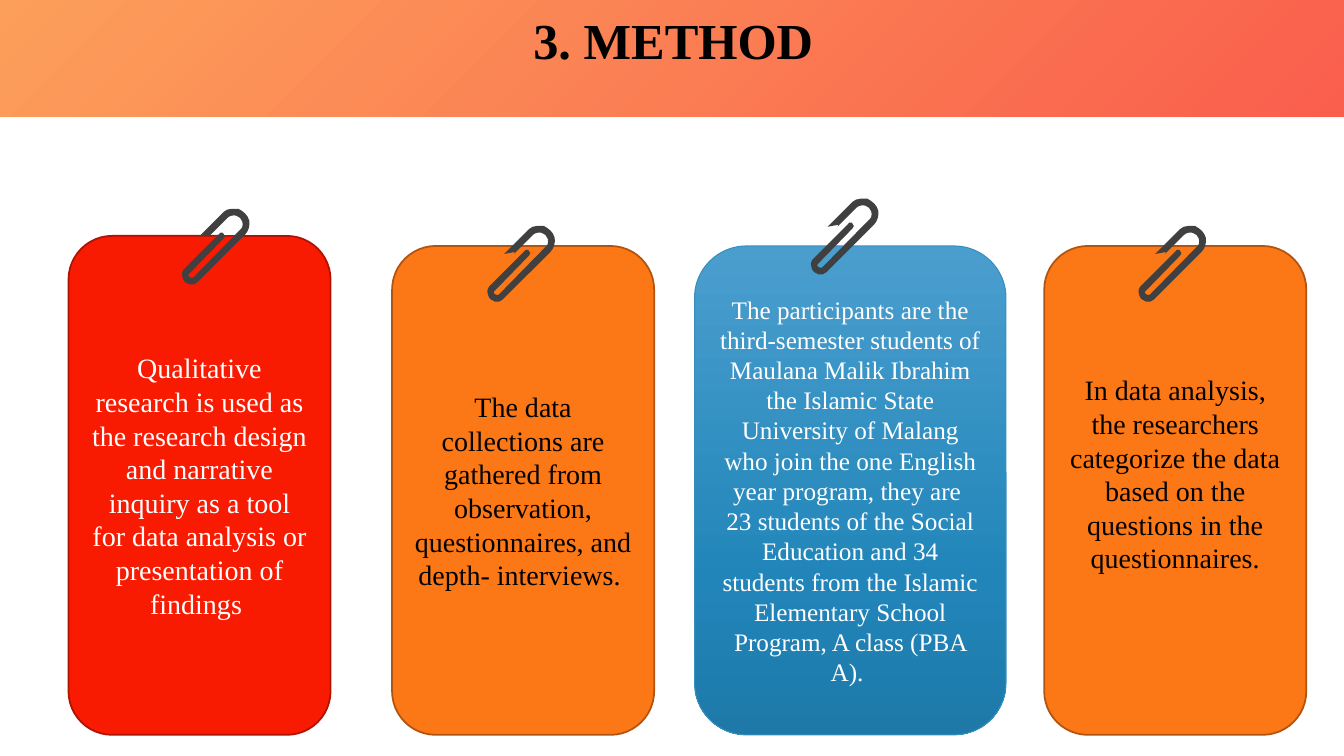
from dataclasses import dataclass
from math import cos, radians, sin

from lxml import etree
from pptx import Presentation
from pptx.dml.color import RGBColor
from pptx.enum.shapes import MSO_SHAPE
from pptx.enum.text import MSO_ANCHOR, PP_ALIGN
from pptx.oxml.ns import qn
from pptx.util import Inches, Pt

RECT = MSO_SHAPE.RECTANGLE
ROUND_RECT = MSO_SHAPE.ROUNDED_RECTANGLE
CENTER = PP_ALIGN.CENTER
MIDDLE = MSO_ANCHOR.MIDDLE

FONT = "Times New Roman"
BLACK, WHITE, GRAY = "000000", "FFFFFF", "404040"
RED, ORANGE = "F81B02", "FC7715"
SLIDE_W, SLIDE_H = 40 / 3, 7.5
CARD_BOTTOM = 7.29
CLIP_W, CLIP_H, CLIP_ANGLE = 0.31, 0.91, 45

CLIP_START = (50, 0)
CLIP_SEGMENTS = [
    (52, 0, 55, 0, 57, 0), (59, 1, 62, 3, 64, 5), (66, 7, 67, 9, 68, 12),
    (69, 17, 67, 23, 64, 26), (16, 74), (14, 76, 11, 77, 8, 76),
    (5, 75, 2, 73, 1, 69), (0, 67, 0, 64, 2, 61), (4, 59), (38, 25),
    (38, 24, 39, 24, 40, 24), (41, 24, 42, 24, 42, 25),
    (44, 26, 44, 29, 42, 30), (8, 65), (7, 65, 7, 66, 7, 67),
    (7, 68, 8, 69, 9, 69), (10, 70, 11, 69, 12, 69), (58, 22),
    (61, 20, 62, 17, 61, 13), (60, 10, 58, 8, 55, 7),
    (52, 6, 48, 7, 46, 9), (27, 28), (28, 26), (17, 28), (42, 3),
    (44, 1, 47, 0, 50, 0),
]


@dataclass(frozen=True)
class Stop:
    pos: int
    color: str
    alpha: int = 100


@dataclass(frozen=True)
class Card:
    left: float
    top: float
    width: float
    fill: str | list[Stop]
    line: str
    line_width: float
    clip_left: float
    clip_top: float
    text: str
    size: int
    color: str
    bottom_inset: float = 0.05


HEADER_STOPS = [Stop(0, RED, 70), Stop(100, ORANGE, 70)]
BLUE_STOPS = [Stop(0, "4A9ECE"), Stop(69, "2185B9"), Stop(100, "1E79A9")]

CARDS = [
    Card(0.68, 2.34, 2.6, RED, "AF1301", 1.25, 1.95, 1.98,
         "Qualitative research is used as the research design and narrative "
         "inquiry as a tool for data analysis or presentation of findings ",
         20, WHITE),
    Card(3.89, 2.44, 2.6, ORANGE, "B2540F", 1.25, 4.98, 2.15,
         "The data collections are gathered from observation, "
         "questionnaires, and depth- interviews. ", 20, BLACK),
    Card(6.89, 2.44, 3.09, BLUE_STOPS, "388EBB", 0.75, 8.19, 1.88,
         "The participants are the third-semester students of Maulana Malik "
         "Ibrahim the Islamic State University of Malang who join the one "
         "English year program, they are  23 students of the Social Education "
         "and 34 students from the Islamic Elementary School Program, "
         "A class (PBA A). ", 18, WHITE),
    Card(10.36, 2.44, 2.6, ORANGE, "B2540F", 1.25, 11.44, 2.15,
         "In data analysis, the researchers categorize the data based on the "
         "questions in the questionnaires.", 20, BLACK, 0.38),
]


def rgb(color: str) -> RGBColor:
    return RGBColor.from_string(color)


def apply(obj, values: dict) -> None:
    for name, value in values.items():
        setattr(obj, name, value)


def fill_solid(sp, color: str) -> None:
    sp.fill.solid()
    sp.fill.fore_color.rgb = rgb(color)


def fill_gradient(sp, stops: list[Stop], angle: int) -> None:
    sp.fill.gradient()
    sp.fill.gradient_angle = angle
    gs_list = sp._element.spPr.find(qn("a:gradFill")).find(qn("a:gsLst"))
    for gs in list(gs_list):
        gs_list.remove(gs)
    for stop in stops:
        gs = etree.SubElement(gs_list, qn("a:gs"), pos=str(stop.pos * 1000))
        clr = etree.SubElement(gs, qn("a:srgbClr"), val=stop.color)
        if stop.alpha < 100:
            etree.SubElement(clr, qn("a:alpha"), val=str(stop.alpha * 1000))


def write_text(sp, text: str, frame: dict, para: dict, font: dict, color: str) -> None:
    tf = sp.text_frame
    apply(tf, {"word_wrap": True, "vertical_anchor": MIDDLE, **frame})
    p = tf.paragraphs[0]
    apply(p, {"alignment": CENTER, **para})
    r = p.add_run()
    r.text = text
    apply(r.font, {"name": FONT, **font})
    r.font.color.rgb = rgb(color)


def draw_header(s) -> None:
    sp = s.shapes.add_shape(RECT, 0, 0, Inches(SLIDE_W), Inches(1.16))
    sp.shadow.inherit = False
    fill_gradient(sp, HEADER_STOPS, 135)
    sp.line.fill.background()
    title = s.shapes.add_textbox(Inches(0.35), Inches(0.21), Inches(12.66), Inches(0.79))
    para = {"line_spacing": Pt(12.1), "space_before": Pt(12), "space_after": Pt(9)}
    write_text(title, "3. METHOD", {}, para, {"size": Pt(36), "bold": True}, BLACK)


def draw_card(s, card: Card) -> None:
    sp = s.shapes.add_shape(ROUND_RECT, Inches(card.left), Inches(card.top),
                            Inches(card.width), Inches(CARD_BOTTOM - card.top))
    sp.shadow.inherit = False
    if isinstance(card.fill, str):
        fill_solid(sp, card.fill)
    else:
        fill_gradient(sp, card.fill, 270)
    sp.line.color.rgb = rgb(card.line)
    sp.line.width = Pt(card.line_width)
    write_text(sp, card.text, {"margin_bottom": Inches(card.bottom_inset)}, {},
               {"size": Pt(card.size)}, card.color)


def clip_points() -> list[tuple[int, int]]:
    points = [CLIP_START]
    for seg in CLIP_SEGMENTS:
        points += zip(seg[::2], seg[1::2])
    c, n = cos(radians(CLIP_ANGLE)), sin(radians(CLIP_ANGLE))
    return [(Inches((c * x + n * y) / 100), Inches((c * y - n * x) / 100))
            for x, y in points]


def bend_curves(sp) -> None:
    lines = iter(list(sp._element.spPr.iter(qn("a:lnTo"))))
    for seg in CLIP_SEGMENTS:
        group = [next(lines) for _ in seg[::2]]
        if len(group) == 3:
            curve = etree.Element(qn("a:cubicBezTo"))
            group[0].addprevious(curve)
            for line in group:
                curve.append(line[0])
                line.getparent().remove(line)


def draw_clip(s, left: float, top: float) -> None:
    start, *rest = clip_points()
    builder = s.shapes.build_freeform(*start)
    builder.add_line_segments(rest, close=True)
    sp = builder.convert_to_shape()
    bend_curves(sp)
    apply(sp, {"left": Inches(left), "top": Inches(top), "width": Inches(CLIP_W),
               "height": Inches(CLIP_H), "rotation": CLIP_ANGLE})
    sp.shadow.inherit = False
    fill_solid(sp, GRAY)
    sp.line.fill.background()


def main() -> None:
    prs = Presentation()
    apply(prs, {"slide_width": Inches(SLIDE_W), "slide_height": Inches(SLIDE_H)})
    s = prs.slides.add_slide(prs.slide_layouts[6])
    draw_header(s)
    for card in CARDS:
        draw_card(s, card)
        draw_clip(s, card.clip_left, card.clip_top)
    prs.save("out.pptx")


if __name__ == "__main__":
    main()
